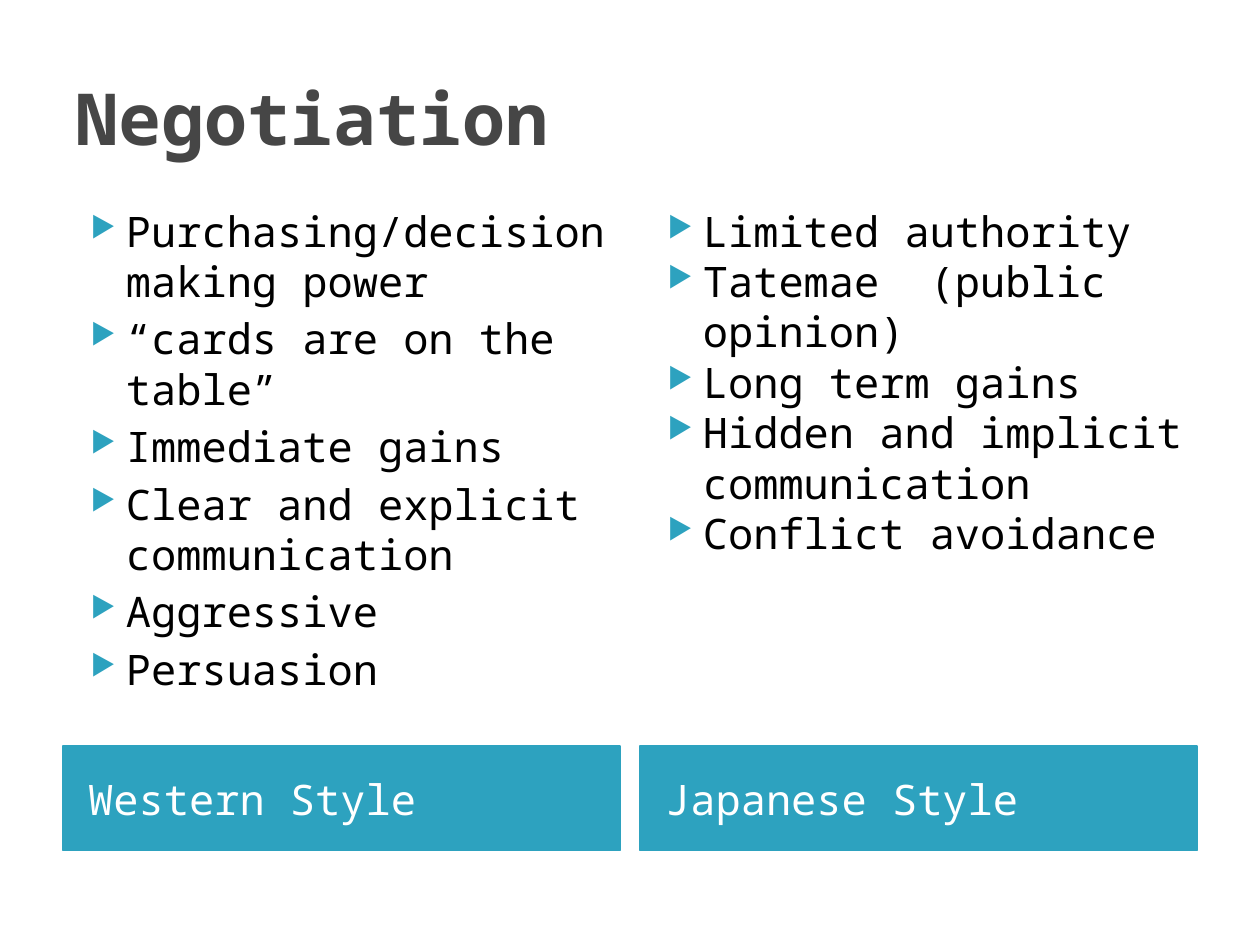
from dataclasses import dataclass

from lxml.etree import SubElement
from pptx import Presentation
from pptx.dml.color import RGBColor
from pptx.enum.shapes import MSO_SHAPE
from pptx.enum.text import MSO_ANCHOR, PP_ALIGN
from pptx.oxml.ns import qn
from pptx.util import Cm, Pt


@dataclass(frozen=True)
class Theme:
    font: str = "Noto Sans Mono"
    title_color: str = "464646"
    accent: str = "2DA2BF"
    body_color: str = "000000"
    label_color: str = "FFFFFF"
    title_size: int = 41
    body_size: int = 24


theme = Theme()


def add_span(para, text, size, color, bold=False):
    span = para.add_run()
    span.text = text
    span.font.name = theme.font
    span.font.size = Pt(size)
    span.font.bold = bold
    span.font.color.rgb = RGBColor.from_string(color)


def add_bullet(para):
    properties = para._p.get_or_add_pPr()
    properties.set("marL", str(Cm(1.02)))
    properties.set("indent", str(-Cm(0.71)))
    bullet_color = SubElement(properties, qn("a:buClr"))
    SubElement(bullet_color, qn("a:srgbClr"), val=theme.accent)
    SubElement(properties, qn("a:buSzPct"), val="68000")
    SubElement(properties, qn("a:buChar"), char="▶")


columns = [
    ("Western Style", 4, [
        "Purchasing/decision making power",
        "“cards are on the table”",
        "Immediate gains",
        "Clear and explicit communication",
        "Aggressive",
        "Persuasion",
    ]),
    ("Japanese Style", 0, [
        "Limited authority",
        "Tatemae  (public opinion)",
        "Long term gains",
        "Hidden and implicit communication",
        "Conflict avoidance",
    ]),
]

deck = Presentation()
deck.slide_width = Cm(25.4)
deck.slide_height = Cm(19.05)
page = deck.slides.add_slide(deck.slide_layouts[6])

margin = Cm(1.27)
column_width = Cm(11.23)
column_step = deck.slide_width - 2 * margin - column_width

title = page.shapes.add_textbox(margin, Cm(0.76), deck.slide_width - 2 * margin, Cm(3.18))
title.text_frame.word_wrap = True
title.text_frame.vertical_anchor = MSO_ANCHOR.MIDDLE
add_span(title.text_frame.paragraphs[0], "Negotiation", theme.title_size, theme.title_color, True)

for column, (style, gap, points) in enumerate(columns):
    left = margin + column * column_step

    label = page.shapes.add_shape(MSO_SHAPE.RECTANGLE, left, Cm(15.04), column_width, Cm(2.11))
    label.shadow.inherit = False
    label.fill.solid()
    label.fill.fore_color.rgb = RGBColor.from_string(theme.accent)
    label.line.color.rgb = RGBColor.from_string(theme.accent)
    label.line.width = Pt(0.75)
    label.text_frame.margin_left = Cm(0.51)
    label.text_frame.vertical_anchor = MSO_ANCHOR.MIDDLE
    para = label.text_frame.paragraphs[0]
    para.alignment = PP_ALIGN.LEFT
    add_span(para, style, theme.body_size, theme.label_color)

    box = page.shapes.add_textbox(left, Cm(4.01), column_width, Cm(10.95))
    box.text_frame.word_wrap = True
    for index, point in enumerate(points):
        para = box.text_frame.add_paragraph() if index else box.text_frame.paragraphs[0]
        add_bullet(para)
        if index:
            para.space_before = Pt(gap)
        add_span(para, point, theme.body_size, theme.body_color)

deck.save("out.pptx")
